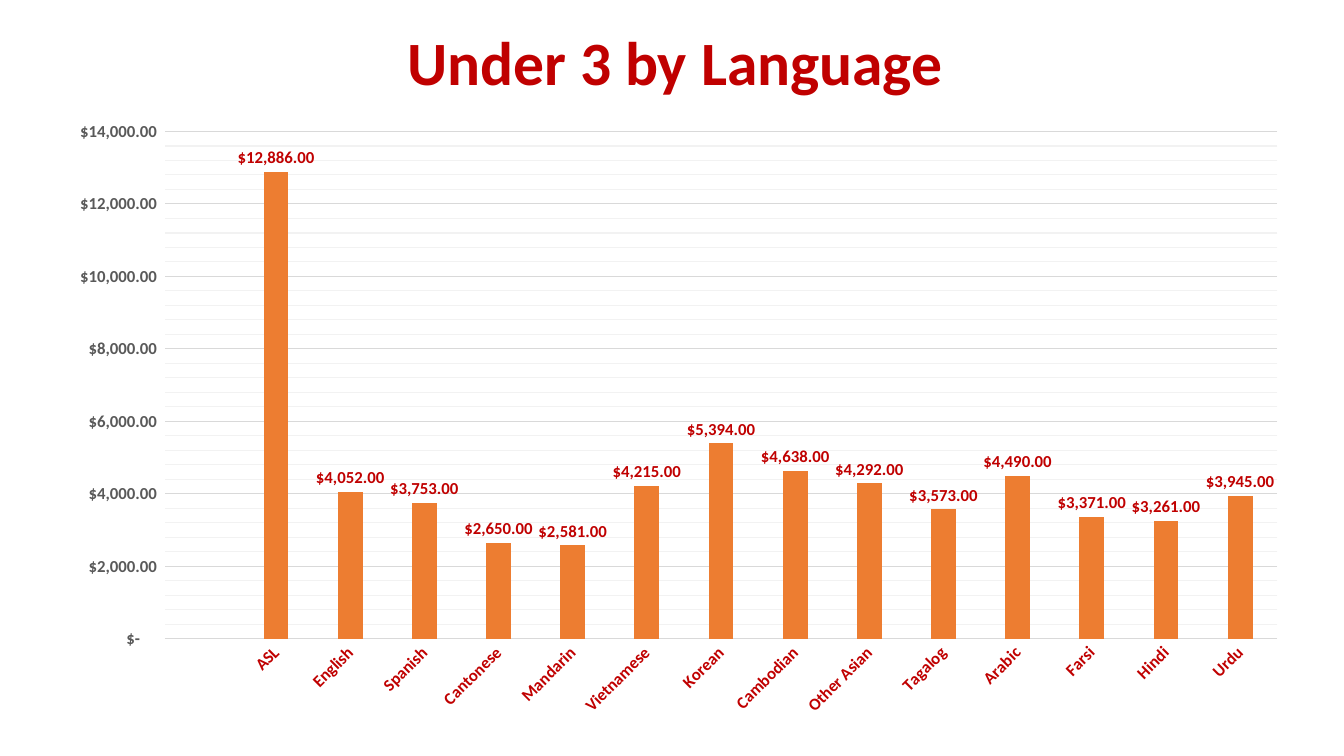
import copy

from lxml import etree
from pptx import Presentation
from pptx import util as u
from pptx.chart import data as chart_data
from pptx.dml import color
from pptx.enum import chart as chart_enum
from pptx.enum import text
from pptx.oxml import ns

COLORS = {
    "accent": "C00000",
    "bar": "ED7D31",
    "axis_text": "595959",
    "major_grid": "D9D9D9",
    "minor_grid": "F2F2F2",
}
ACCOUNTING = '_("$"* #,##0.00_);_("$"* \\(#,##0.00\\);_("$"* "-"??_);_(@_)'
COST_BY_LANGUAGE = {
    "": None,
    "ASL": 12886,
    "English": 4052,
    "Spanish": 3753,
    "Cantonese": 2650,
    "Mandarin": 2581,
    "Vietnamese": 4215,
    "Korean": 5394,
    "Cambodian": 4638,
    "Other Asian": 4292,
    "Tagalog": 3573,
    "Arabic": 4490,
    "Farsi": 3371,
    "Hindi": 3261,
    "Urdu": 3945,
}


class SlideBuilder:
    font_name = "Calibri"

    def __init__(self, slide):
        self.slide = slide

    def style_font(self, font, size, color_name):
        font.name = self.font_name
        font.size = u.Pt(size)
        font.bold = True
        font.color.rgb = color.RGBColor.from_string(COLORS[color_name])

    def style_line(self, line, color_name):
        line.width = u.Pt(0.75)
        line.color.rgb = color.RGBColor.from_string(COLORS[color_name])

    def add_title(self, wording, left, top, width, height):
        title = self.slide.shapes.title
        title.left, title.top = u.Pt(left), u.Pt(top)
        title.width, title.height = u.Pt(width), u.Pt(height)
        frame = title.text_frame
        frame.text = wording
        frame.vertical_anchor = text.MSO_ANCHOR.MIDDLE
        paragraph = frame.paragraphs[0]
        paragraph.alignment = text.PP_ALIGN.CENTER
        paragraph.line_spacing = 0.9
        self.style_font(paragraph.runs[0].font, 44, "accent")

    def add_column_chart(self, values, left, top, width, height):
        data = chart_data.CategoryChartData(number_format=ACCOUNTING)
        data.categories = list(values)
        data.add_series("Series 1", list(values.values()))
        chart = self.slide.shapes.add_chart(
            chart_enum.XL_CHART_TYPE.COLUMN_CLUSTERED,
            u.Pt(left), u.Pt(top), u.Pt(width), u.Pt(height), data,
        ).chart
        chart.has_legend = False
        chart.has_title = False
        chart.font.name = self.font_name
        chart.font.size = u.Pt(10)
        self.style_columns(chart.plots[0])
        self.style_axes(chart)
        self.style_minor_gridlines(chart)
        self.place_plot_area(chart, x=0.09, y=0.035, w=0.89, h=0.82)

    def style_columns(self, plot):
        plot.gap_width = 199
        plot.vary_by_categories = False
        fill = plot.series[0].format.fill
        fill.solid()
        fill.fore_color.rgb = color.RGBColor.from_string(COLORS["bar"])
        plot.has_data_labels = True
        labels = plot.data_labels
        labels.show_value = True
        labels.position = chart_enum.XL_LABEL_POSITION.OUTSIDE_END
        labels.number_format = ACCOUNTING
        labels.number_format_is_linked = False
        self.style_font(labels.font, 12, "accent")

    def style_axes(self, chart):
        languages, costs = chart.category_axis, chart.value_axis
        for axis, color_name in ((languages, "accent"), (costs, "axis_text")):
            axis.major_tick_mark = chart_enum.XL_TICK_MARK.NONE
            axis.minor_tick_mark = chart_enum.XL_TICK_MARK.NONE
            self.style_font(axis.tick_labels.font, 12, color_name)
        self.style_line(languages.format.line, "major_grid")
        for body in chart.element.xpath(".//c:catAx/c:txPr/a:bodyPr"):
            body.set("rot", "-2700000")
            body.set("vert", "horz")

        costs.minimum_scale, costs.maximum_scale = 0, 14000
        costs.major_unit, costs.minor_unit = 2000, 400
        costs.format.line.fill.background()
        costs.tick_labels.number_format = ACCOUNTING
        costs.tick_labels.number_format_is_linked = False
        costs.has_major_gridlines = True
        costs.has_minor_gridlines = True
        self.style_line(costs.major_gridlines.format.line, "major_grid")

    def style_minor_gridlines(self, chart):
        """Give the minor gridlines the major line style in a lighter colour."""
        major_style = chart.element.xpath(".//c:valAx/c:majorGridlines/c:spPr")[0]
        minor_style = copy.deepcopy(major_style)
        for line_color in minor_style.iter(ns.qn("a:srgbClr")):
            line_color.set("val", COLORS["minor_grid"])
        chart.element.xpath(".//c:valAx/c:minorGridlines")[0].append(minor_style)

    def place_plot_area(self, chart, **fractions):
        """Fix the inner plot area as fractions of the chart's size."""
        plot_area = chart.element.xpath(".//c:plotArea")[0]
        for automatic in plot_area.findall(ns.qn("c:layout")):
            plot_area.remove(automatic)
        layout = etree.Element(ns.qn("c:layout"))
        manual = etree.SubElement(layout, ns.qn("c:manualLayout"))
        settings = {"layoutTarget": "inner", "xMode": "edge", "yMode": "edge"}
        for tag, value in {**settings, **fractions}.items():
            etree.SubElement(manual, ns.qn(f"c:{tag}")).set("val", str(value))
        plot_area.insert(0, layout)


def main():
    presentation = Presentation()
    presentation.slide_width = u.Pt(960)
    presentation.slide_height = u.Pt(540)
    title_only = presentation.slide_layouts[5]
    builder = SlideBuilder(presentation.slides.add_slide(title_only))
    builder.add_title("Under 3 by Language", 68.4, 15, 828, 63.4)
    builder.add_column_chart(COST_BY_LANGUAGE, 37.4, 78.5, 892.8, 442)
    presentation.save("out.pptx")


if __name__ == "__main__":
    main()
